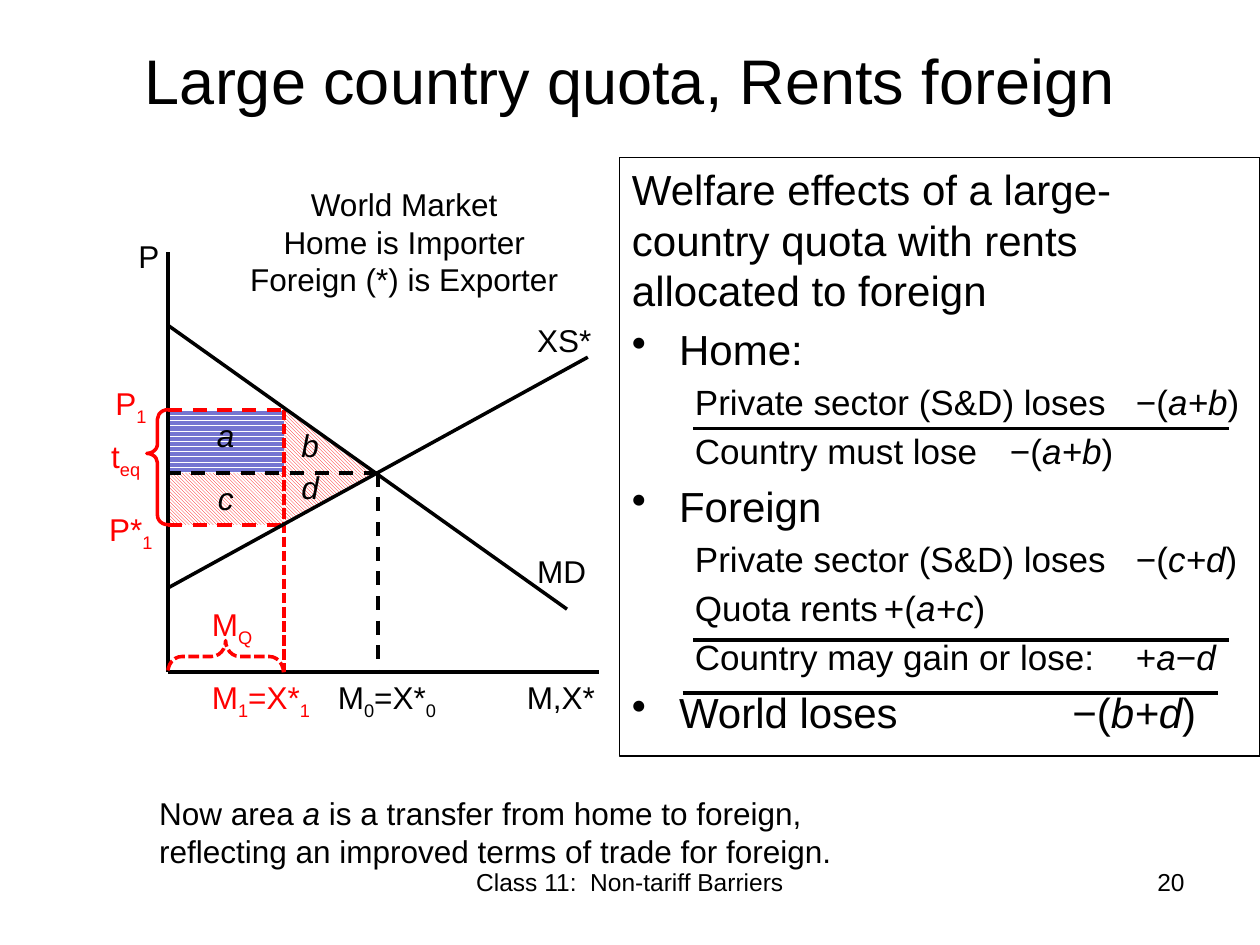
from dataclasses import dataclass

from lxml import etree
from pptx import Presentation
from pptx import util as u
from pptx.dml.color import RGBColor
from pptx.enum import dml, shapes, text
from pptx.oxml.ns import qn

LEFT, CENTER, RIGHT = text.PP_ALIGN.LEFT, text.PP_ALIGN.CENTER, text.PP_ALIGN.RIGHT
DIAGONAL = dml.MSO_PATTERN.DARK_DOWNWARD_DIAGONAL
HORIZONTAL = dml.MSO_PATTERN.DARK_HORIZONTAL
DASH, DOTS = dml.MSO_LINE.DASH, dml.MSO_LINE.SQUARE_DOT


@dataclass(frozen=True)
class Theme:
    font: str = "Arial"
    ink: RGBColor = RGBColor(0, 0, 0)
    quota: RGBColor = RGBColor(255, 0, 0)
    transfer: RGBColor = RGBColor(0x75, 0x75, 0xD1)
    paper: RGBColor = RGBColor(255, 255, 255)
    title: int = 36
    heading: int = 24
    detail: int = 20
    label: int = 18
    footer: int = 14
    stroke: float = 2
    frame: float = 0.75


class Sketch:
    """Draws on one slide in the theme's style; all lengths are centimetres."""

    def __init__(self, page, theme):
        self.page, self.theme = page, theme

    def fill_para(self, para, marked, size, color=None, subscript=False, align=LEFT):
        """Fill a paragraph; every second piece between bars is italic or subscript."""
        para.alignment = align
        for index, piece in enumerate(marked.split("|")):
            if not piece:
                continue
            span = para.add_run()
            span.text = piece
            span.font.name = self.theme.font
            span.font.size = u.Pt(size)
            span.font.color.rgb = color or self.theme.ink
            if index % 2 and subscript:
                span.font._element.set("baseline", "-25000")
            elif index % 2:
                span.font.italic = True

    def title(self, words):
        box = self.page.shapes.title
        box.left, box.top, box.width, box.height = map(u.Cm, (1.27, 0, 22.86, 3.18))
        box.text_frame.vertical_anchor = text.MSO_ANCHOR.MIDDLE
        self.fill_para(box.text_frame.paragraphs[0], words, self.theme.title, align=CENTER)

    def text(self, frame, *lines, size=None, **style):
        box = self.page.shapes.add_textbox(*map(u.Cm, frame))
        box.text_frame.word_wrap = True
        for index, line in enumerate(lines):
            para = box.text_frame.add_paragraph() if index else box.text_frame.paragraphs[0]
            self.fill_para(para, line, size or self.theme.label, **style)
        return box

    def line(self, start, end, color=None, dash=None):
        line = self.page.shapes.add_connector(
            shapes.MSO_CONNECTOR.STRAIGHT, *map(u.Cm, start + end))
        self.stroke(line, color or self.theme.ink, dash)
        etree.SubElement(line._element.spPr, qn("a:effectLst"))

    def stroke(self, item, color, dash):
        item.line.color.rgb = color
        item.line.width = u.Pt(self.theme.stroke)
        if dash:
            item.line.dash_style = dash

    def shape(self, kind, frame, flip=False):
        shape = self.page.shapes.add_shape(kind, *map(u.Cm, frame))
        shape.shadow.inherit = False
        if flip:
            shape._element.spPr.xfrm.set("flipV", "1")
        return shape

    def area(self, kind, frame, pattern, color, flip=False):
        area = self.shape(kind, frame, flip)
        area.fill.patterned()
        area.fill.pattern = pattern
        area.fill.fore_color.rgb = color
        area.fill.back_color.rgb = self.theme.paper
        area.line.fill.background()

    def brace(self, frame, tip, rotation=0, dash=None):
        brace = self.shape(shapes.MSO_SHAPE.LEFT_BRACE, frame, flip=True)
        brace.fill.background()
        brace.adjustments[0], brace.adjustments[1] = 0.44, tip
        brace.rotation = rotation
        self.stroke(brace, self.theme.quota, dash)

    def welfare(self, frame, intro, rows):
        """A framed list of (is heading, words, amount), amounts set at a tab stop."""
        theme = self.theme
        box = self.text(frame, intro, size=theme.heading)
        box.line.color.rgb = theme.ink
        box.line.width = u.Pt(theme.frame)
        box.text_frame.paragraphs[0].space_before = u.Pt(5)
        for heading, words, amount in rows:
            para = box.text_frame.add_paragraph()
            size = theme.heading if heading else theme.detail
            self.fill_para(para, f"{words}\t{amount}" if amount else words, size)
            para.space_before = u.Pt(size / 5)
            margin, indent, stop = (0.95, -0.95, 8.88) if heading else (0, 1.27, 9.98)
            para.level = 0 if heading else 1
            props = para._p.get_or_add_pPr()
            props.set("marL", str(u.Cm(margin)))
            props.set("indent", str(u.Cm(indent)))
            if heading:
                etree.SubElement(props, qn("a:buChar"), char="•")
            else:
                etree.SubElement(props, qn("a:buNone"))
            if amount:
                stops = etree.SubElement(props, qn("a:tabLst"))
                etree.SubElement(stops, qn("a:tab"), pos=str(u.Cm(stop)), algn="l")


def draw_market(sketch):
    theme = sketch.theme
    axis, quota, free = 3.39, 5.72, 7.62
    home_price, free_price, foreign_price, base = 8.26, 9.53, 10.58, 13.55
    rise, fall, width = free_price - home_price, foreign_price - free_price, quota - axis

    rectangle, triangle = shapes.MSO_SHAPE.RECTANGLE, shapes.MSO_SHAPE.RIGHT_TRIANGLE
    sketch.area(rectangle, (axis, free_price, width, fall), DIAGONAL, theme.quota)
    sketch.area(rectangle, (axis, home_price, width, rise), HORIZONTAL, theme.transfer)
    sketch.area(triangle, (quota, free_price, free - quota, fall), DIAGONAL, theme.quota, True)
    sketch.area(triangle, (quota, home_price, free - quota, rise), DIAGONAL, theme.quota)

    sketch.line((axis, base), (12.07, base))
    sketch.line((axis, base), (axis, 5.08))
    sketch.line((free, free_price), (free, base), dash=DASH)
    sketch.line((quota, home_price), (quota, base), theme.quota, DOTS)
    for price in (foreign_price, home_price):
        sketch.line((axis, price), (quota, price), theme.quota, DASH)
    sketch.line((axis, 11.85), (11.85, 7.2))
    sketch.line((11.43, 12.28), (axis, 6.56))
    sketch.line((free, free_price), (axis, free_price), dash=DASH)
    sketch.brace((2.96, home_price, 0.43, foreign_price - home_price), 0.62)
    sketch.brace((4.23, 12.07, 0.64, 2.33), 0.5, rotation=90, dash=DOTS)

    sketch.text((4.02, 3.6, 8.26, 2.57), "World Market", "Home is Importer",
                "Foreign (*) is Exporter", align=CENTER)
    labels = [
        ("P", 2.54, 4.66, 1.9, theme.ink, LEFT),
        ("MD", 10.58, 11.01, 1.9, theme.ink, LEFT),
        ("XS*", 10.58, 6.35, 1.9, theme.ink, LEFT),
        ("M,X*", 10.37, base, 1.9, theme.ink, LEFT),
        ("M|0|=X*|0", 6.56, base, 2.75, theme.ink, LEFT),
        ("M|1|=X*|1", 4.02, base, 2.75, theme.quota, LEFT),
        ("M|Q", 4.02, 12.07, 2.54, theme.quota, LEFT),
        ("P|1", 1.9, 7.62, 1.48, theme.quota, CENTER),
        ("P*|1", 1.9, 10.16, 1.48, theme.quota, CENTER),
        ("t|eq", 1.69, 8.68, 1.69, theme.quota, CENTER),
    ]
    for words, left, top, span, color, align in labels:
        sketch.text((left, top, span, 1.02), words, color=color, align=align, subscript=True)
    for name, left, top in (("a", 4.02, 8.26), ("b", 5.72, 8.47),
                            ("c", 4.02, 9.53), ("d", 5.72, 9.31)):
        sketch.text((left, top, 1.06, 1.02), f"|{name}|", align=CENTER)


def draw_welfare(sketch):
    sketch.welfare(
        (12.49, 3.18, 12.91, 12.06),
        "Welfare effects of a large-country quota with rents allocated to foreign",
        [(True, "Home:", ""),
         (False, "Private sector (S&D) loses", "−(|a+b|)"),
         (False, "Country must lose", "−(|a+b|)"),
         (True, "Foreign", ""),
         (False, "Private sector (S&D) loses", "−(|c+d|)"),
         (False, "Quota rents", "+(|a+c|)"),
         (False, "Country may gain or lose:", "+|a|−|d"),
         (True, "World loses", "−(|b+d|)")])
    for left, top in ((13.97, 8.64), (13.97, 12.9), (13.76, 13.97)):
        sketch.line((left, top), (left + 10.8, top))


def main():
    deck = Presentation()
    deck.slide_width, deck.slide_height = u.Cm(25.4), u.Cm(19.05)
    theme = Theme()
    sketch = Sketch(deck.slides.add_slide(deck.slide_layouts.get_by_name("Title Only")), theme)
    sketch.title("Large country quota, Rents foreign")
    draw_market(sketch)
    draw_welfare(sketch)
    sketch.text((2.96, 15.88, 15.45, 1.8), "Now area |a| is a transfer from home to foreign, "
                "reflecting an improved terms of trade for foreign.")
    sketch.text((8.68, 17.36, 8.04, 1.32), "Class 11:  Non-tariff Barriers",
                size=theme.footer, align=CENTER)
    sketch.text((18.2, 17.36, 5.93, 1.32), "20", size=theme.footer, align=RIGHT)
    deck.save("out.pptx")


if __name__ == "__main__":
    main()
